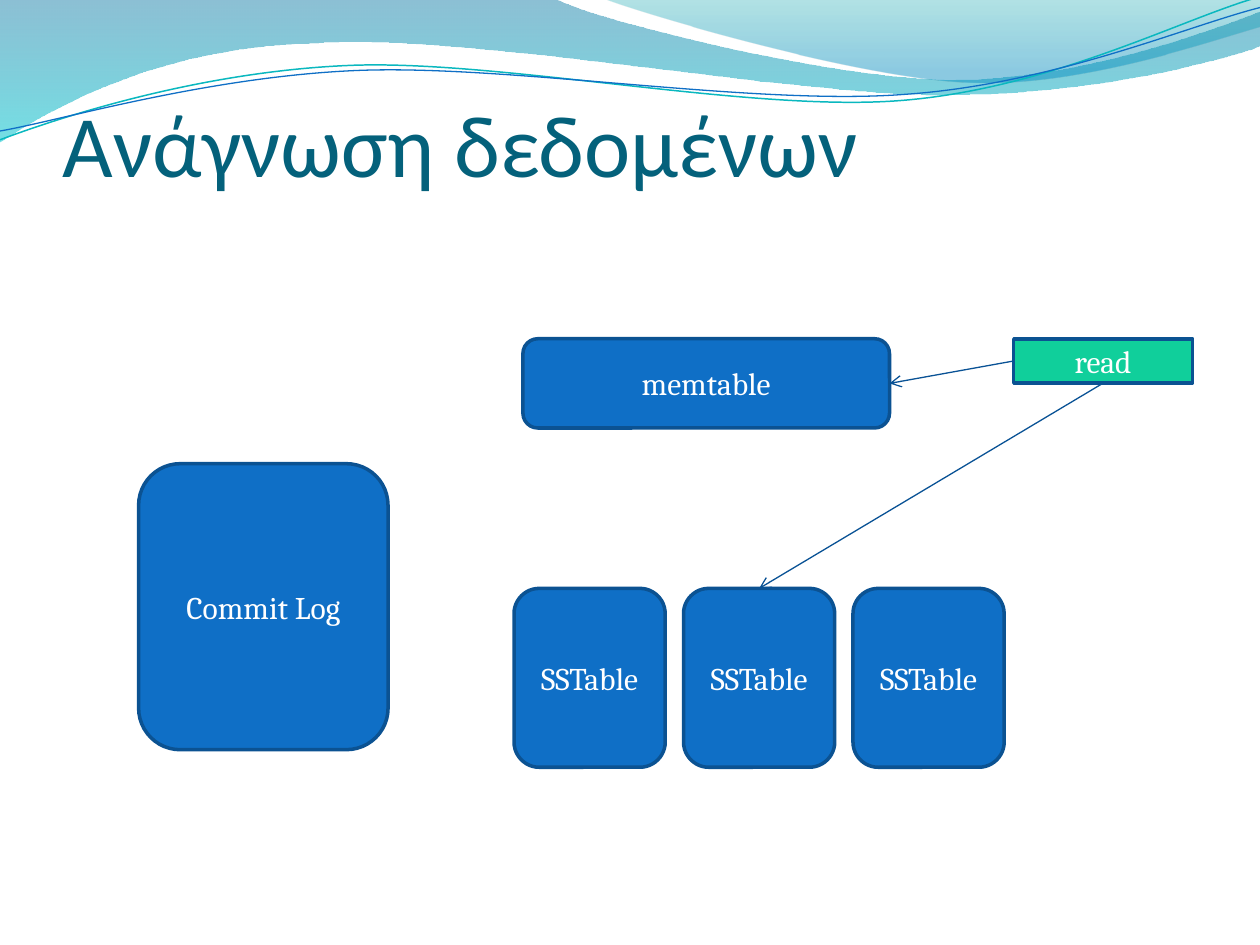
import pptx
import pptx.util
import pptx.dml.color
import pptx.enum.shapes
import pptx.enum.text
import lxml.etree
from pptx.oxml.ns import qn

SHAPE = pptx.enum.shapes.MSO_SHAPE
ANCHOR = pptx.enum.text.MSO_ANCHOR
ALIGN = pptx.enum.text.PP_ALIGN
BLUE, GREEN, EDGE, ARROW, WHITE = "0F6FC6", "10CF9B", "0B5292", "095295", "FFFFFF"
WIDTH, HEIGHT = pptx.util.Inches(10), pptx.util.Inches(7.5)
TOP, LEFT, BOTTOM, RIGHT = range(4)  # connection sites of a box


def rgb(code):
    return pptx.dml.color.RGBColor.from_string(code)


def place(x, y, w, h):
    """Percentages of the slide's width and height to EMU."""
    return [int(v * side / 100) for v, side in zip((x, y, w, h), (WIDTH, HEIGHT) * 2)]


def style_line(line, color, width):
    line.color.rgb = rgb(color)
    line.width = pptx.util.Pt(width)


def style_text(p, font, size, color):
    for r in p.runs:
        r.font.name = font
        r.font.size = pptx.util.Pt(size)
        r.font.color.rgb = rgb(color)


def add_path(s, start, segments, close):
    """Outline in inches: 2 numbers make a straight segment, 6 a cubic one."""
    numbers = [pptx.util.Inches(v) for seg in (start, *segments) for v in seg]
    points = list(zip(numbers[::2], numbers[1::2]))
    builder = s.shapes.build_freeform(*points[0])
    builder.add_line_segments(points[1:], close=close)
    sp = builder.convert_to_shape()
    sp.shadow.inherit = False
    # Merge each run of three straight steps into one cubic segment
    steps = list(sp._element.spPr.iter(qn("a:lnTo")))
    for seg in segments:
        group, steps = steps[:len(seg) // 2], steps[len(seg) // 2:]
        if len(group) == 3:
            cubic = lxml.etree.Element(qn("a:cubicBezTo"))
            group[0].addprevious(cubic)
            for step in group:
                cubic.append(step[0])
                step.getparent().remove(step)
    return sp


def add_wave(s, start, segments, stops):
    """Closed shape with a top-to-bottom gradient of (position, colour, alpha %)."""
    sp = add_path(s, start, segments, True)
    sp.line.fill.background()
    sp.fill.gradient()
    sp.fill.gradient_angle = 270
    for stop, (position, color, _) in zip(sp.fill.gradient_stops, stops):
        stop.position = position
        stop.color.rgb = rgb(color)
    for clr, (_, _, alpha) in zip(sp._element.spPr.iter(qn("a:srgbClr")), stops):
        lxml.etree.SubElement(clr, qn("a:alpha")).set("val", str(alpha * 1000))


def add_curve(s, start, segments, color, width):
    sp = add_path(s, start, segments, False)
    sp.fill.background()
    style_line(sp.line, color, width)


def add_title(s, text, *box):
    tf = s.shapes.add_textbox(*place(*box)).text_frame
    tf.word_wrap = True
    tf.vertical_anchor = ANCHOR.BOTTOM
    tf.margin_left = tf.margin_right = tf.margin_bottom = 0
    tf.text = text
    style_text(tf.paragraphs[0], "Calibri", 50, "04617B")


def add_box(s, text, *box, kind=SHAPE.ROUNDED_RECTANGLE, fill=BLUE):
    sp = s.shapes.add_shape(kind, *place(*box))
    sp.shadow.inherit = False
    sp.fill.solid()
    sp.fill.fore_color.rgb = rgb(fill)
    style_line(sp.line, EDGE, 2)
    tf = sp.text_frame
    tf.word_wrap = True
    tf.vertical_anchor = ANCHOR.MIDDLE
    tf.text = text
    p = tf.paragraphs[0]
    p.alignment = ALIGN.CENTER
    style_text(p, "Cambria", 18, WHITE)
    return sp


def add_arrow(s, source, source_site, target, target_site):
    c = s.shapes.add_connector(pptx.enum.shapes.MSO_CONNECTOR.STRAIGHT, 0, 0, 0, 0)
    c.begin_connect(source, source_site)
    c.end_connect(target, target_site)
    style_line(c.line, ARROW, 0.75)
    ln = c.line._get_or_add_ln()
    lxml.etree.SubElement(ln, qn("a:tailEnd")).set("type", "arrow")
    lxml.etree.SubElement(c._element.spPr, qn("a:effectLst"))


def add_waves(s):
    add_wave(s, (0, 0), [
        (4.4, -0.01),
        (4.76, 0.17, 6.64, 0.63, 7.58, 0.63),
        (8.53, 0.63, 9.58, 0.26, 10, 0.09),
        (10.01, 0.36),
        (9.83, 0.44, 8.7, 0.76, 7.46, 0.75),
        (6.22, 0.75, 3.82, 0.28, 2.57, 0.34),
        (1.29, 0.36, 0.46, 0.83, -0.01, 1.13),
    ], [(0, "0074A1", 45), (1, "00C6CF", 55)])
    add_wave(s, (4.79, -0.01), [
        (5.09, 0.11, 6.82, 0.62, 7.69, 0.65),
        (8.56, 0.69, 9.61, 0.32, 10, 0.21),
        (10, 0),
    ], [(0, "00A1A9", 30), (0.8, "008BBF", 45)])
    add_curve(s, (0, 1.11), [
        (0.48, 0.93, 1.58, 0.57, 2.77, 0.52),
        (3.95, 0.47, 5.93, 0.89, 7.13, 0.8),
        (8.33, 0.71, 9.38, 0.15, 9.98, -0.02),
    ], "0AB8BF", 0.85)
    add_curve(s, (0, 1.04), [
        (0.47, 0.96, 1.64, 0.61, 2.83, 0.56),
        (4.03, 0.51, 5.97, 0.84, 7.17, 0.75),
        (8.36, 0.67, 9.41, 0.21, 10, 0.06),
    ], BLUE, 0.75)


def main():
    prs = pptx.Presentation()
    prs.slide_width, prs.slide_height = WIDTH, HEIGHT
    s = prs.slides.add_slide(prs.slide_layouts[6])

    # Wave header and title
    add_waves(s)
    add_title(s, "Ανάγνωση δεδομένων", 5, 4, 90, 16.67)

    # Storage: three equal tables, the log and the memory table
    sstables = [add_box(s, "SSTable", 40.8 + 13.45 * i, 62.27, 12, 18.93)
                for i in range(3)]
    add_box(s, "Commit Log", 11, 49.07, 19.8, 30.27)
    memtable = add_box(s, "memtable", 41.5, 35.85, 29.1, 9.45)

    # Read request and the places it looks in
    read = add_box(s, "read", 80.45, 35.85, 14.2, 4.7, kind=SHAPE.RECTANGLE, fill=GREEN)
    add_arrow(s, read, LEFT, memtable, RIGHT)
    add_arrow(s, read, BOTTOM, sstables[1], TOP)

    prs.save("out.pptx")


if __name__ == "__main__":
    main()
